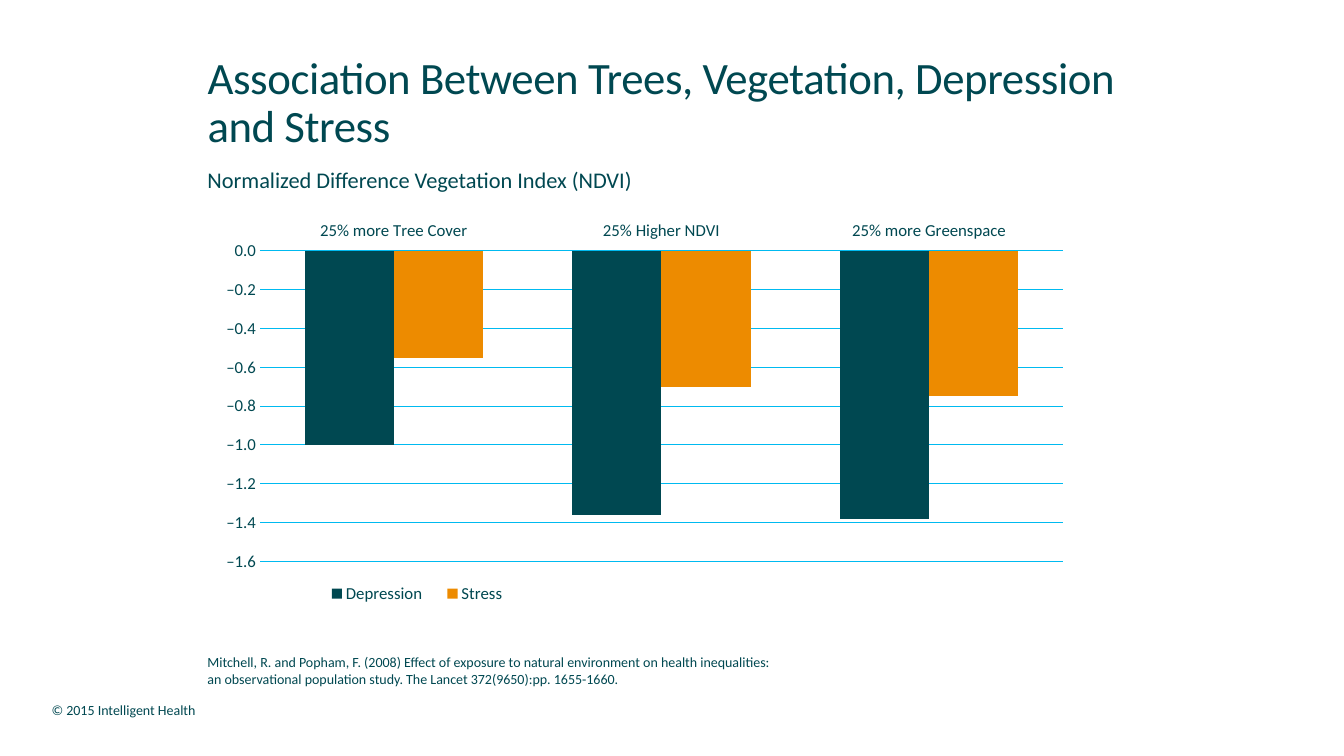
import pptx
import pptx.chart.data
import pptx.dml.color
import pptx.enum.chart
import pptx.enum.text
import pptx.oxml
import pptx.oxml.ns
import pptx.util
from dataclasses import dataclass

Cm, Pt = pptx.util.Cm, pptx.util.Pt
RGB = pptx.dml.color.RGBColor.from_string
ENUM = pptx.enum.chart


@dataclass(frozen=True)
class Theme:
    face: str = "Calibri"
    teal: str = "004851"
    gold: str = "ED8B00"
    blue: str = "00BAF0"
    head: int = 32
    sub: int = 16
    label: int = 12
    small: int = 10


THEME = Theme()
LEFT = 5.23  # shared left edge of the content, in cm


def style(font, size, color=THEME.teal):
    font.name, font.size, font.bold = THEME.face, Pt(size), False
    font.color.rgb = RGB(color)


def write(shape, text, size=THEME.small, spread=None, track=None):
    """Fill a shape with one paragraph per line of text."""
    frame = shape.text_frame
    frame.word_wrap = True
    frame.auto_size = pptx.enum.text.MSO_AUTO_SIZE.NONE
    frame.vertical_anchor = pptx.enum.text.MSO_ANCHOR.TOP
    frame.margin_left = frame.margin_right = 0
    frame.margin_top = frame.margin_bottom = 0
    for i, line in enumerate(text.split("\n")):
        para = frame.paragraphs[0] if i == 0 else frame.add_paragraph()
        para.alignment = pptx.enum.text.PP_ALIGN.LEFT
        if spread:
            para.line_spacing = spread
        run = para.add_run()
        run.text = line
        style(run.font, size)
        if track:
            run.font._element.set("spc", str(track))


def place(part, x, y, w, h):
    """Set a part in a box given in cm."""
    part.left, part.top, part.width, part.height = Cm(x), Cm(y), Cm(w), Cm(h)


def note(slide, box, text, **form):
    shape = slide.shapes.add_textbox(*(Cm(n) for n in box))
    write(shape, text, **form)


def header(slide, x, y, w, h):
    place(slide.shapes.title, x, y, w, h)
    write(slide.shapes.title,
          "Association Between Trees, Vegetation, Depression and Stress",
          size=THEME.head, spread=0.9, track=-30)
    note(slide, (x, y + 2.79, 14, 0.7),
         "Normalized Difference Vegetation Index (NDVI)", size=THEME.sub)


def layout(part, x, y, w, h, inner=False):
    """Fix a chart part at fractions of the chart's size."""
    target = '<c:layoutTarget val="inner"/>' if inner else ""
    rules = "".join(f'<c:{key}Mode val="edge"/>' for key in "xy")
    sizes = "".join(f'<c:{key} val="{val}"/>'
                    for key, val in zip("xywh", (x, y, w, h)))
    node = pptx.oxml.parse_xml(
        f'<c:layout {pptx.oxml.ns.nsdecls("c")}><c:manualLayout>'
        f'{target}{rules}{sizes}</c:manualLayout></c:layout>')
    tag = pptx.oxml.ns.qn("c:layout")
    for old in part.findall(tag):
        part.remove(old)
    first = part.find(pptx.oxml.ns.qn("c:legendPos"))
    part.insert(0 if first is None else part.index(first) + 1, node)


def graph(slide, x, y, w, h):
    data = pptx.chart.data.CategoryChartData()
    data.categories = ["25% more Tree Cover", "25% Higher NDVI",
                       "25% more Greenspace"]
    data.add_series("Depression", (-1, -1.36, -1.38))
    data.add_series("Stress", (-0.55, -0.7, -0.75))
    chart = slide.shapes.add_chart(
        ENUM.XL_CHART_TYPE.COLUMN_CLUSTERED,
        Cm(x), Cm(y), Cm(w), Cm(h), data).chart
    style(chart.font, THEME.label)
    chart.has_title = False

    # Columns
    plot = chart.plots[0]
    plot.gap_width, plot.overlap, plot.vary_by_categories = 100, 0, False
    for series, color in zip(plot.series, (THEME.teal, THEME.gold)):
        series.invert_if_negative = False
        series.format.fill.solid()
        series.format.fill.fore_color.rgb = RGB(color)

    # Axes
    cats, vals = chart.category_axis, chart.value_axis
    for axis in (cats, vals):
        axis.major_tick_mark = axis.minor_tick_mark = ENUM.XL_TICK_MARK.NONE
        style(axis.tick_labels.font, THEME.label)
    cats.tick_label_position = ENUM.XL_TICK_LABEL_POSITION.HIGH
    vals.minimum_scale, vals.maximum_scale, vals.major_unit = -1.6, 0, 0.2
    vals.tick_labels.number_format = "#,##0.0;\\–#,##0.0"
    vals.tick_labels.number_format_is_linked = False
    vals.format.line.fill.background()
    for line in (cats.format.line, vals.major_gridlines.format.line):
        line.color.rgb = RGB(THEME.blue)
        line.width = Pt(0.75)

    # Legend
    chart.has_legend = True
    key = chart.legend
    key.position = ENUM.XL_LEGEND_POSITION.BOTTOM
    key.include_in_layout = False
    style(key.font, THEME.label)
    layout(key._element, 0.12, 0.9, 0.24, 0.08)
    layout(plot._element.getparent(), 0.06, 0.09, 0.92, 0.77, inner=True)


def footer(slide, x, y, w, h):
    note(slide, (x, y, w, h),
         "Mitchell, R. and Popham, F. (2008) Effect of exposure to natural "
         "environment on health inequalities:\n"
         "an observational population study. The Lancet "
         "372(9650):pp. 1655-1660.")
    note(slide, (1.3, y + 1.22, 4.45, 0.43), "© 2015 Intelligent Health")


def main():
    deck = pptx.Presentation()
    deck.slide_width, deck.slide_height = Cm(33.87), Cm(19.05)
    slide = deck.slides.add_slide(deck.slide_layouts[5])
    header(slide, LEFT, 1.4, 23.39, 1.22)
    graph(slide, LEFT, 5.41, 22, 10.16)
    footer(slide, LEFT, 16.46, 17.07, 0.86)
    deck.save("out.pptx")


if __name__ == "__main__":
    main()
